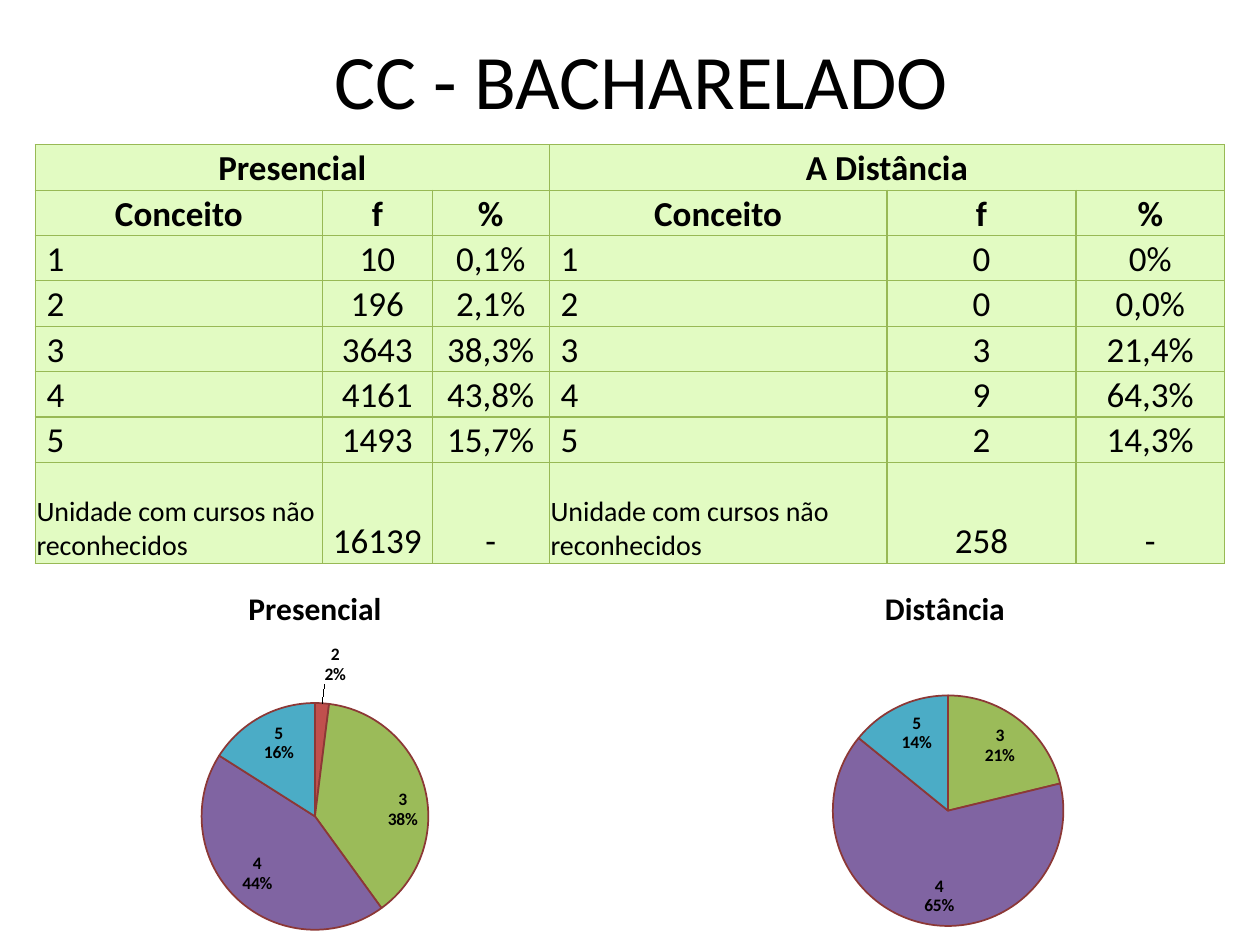
from lxml.etree import SubElement
from pptx import Presentation
from pptx.chart.data import CategoryChartData
from pptx.dml.color import RGBColor
from pptx.enum.chart import XL_CHART_TYPE, XL_LABEL_POSITION
from pptx.enum.text import MSO_ANCHOR, PP_ALIGN
from pptx.oxml import parse_xml
from pptx.oxml.ns import nsdecls, qn
from pptx.util import Inches, Pt

FONT = "Calibri"
BLACK = "000000"
CELL_FILL = "E2FBC2"
BORDER = "98B955"
SLICE_LINE = "8C3836"
SLICES = ["4F81BD", "C0504D", "9BBB59", "8064A2", "4BACC6"]
GRADES = ["1", "2", "3", "4", "5"]
UNRECOGNISED = "Unidade com cursos não reconhecidos"
COLUMNS = [2.28, 0.87, 0.93, 2.68, 1.5, 1.18]
ROWS = [
    ["Presencial", "", "", "A Distância", "", ""],
    ["Conceito", "f", "%"] * 2,
    ["1", "10", "0,1%", "1", "0", "0%"],
    ["2", "196", "2,1%", "2", "0", "0,0%"],
    ["3", "3643", "38,3%", "3", "3", "21,4%"],
    ["4", "4161", "43,8%", "4", "9", "64,3%"],
    ["5", "1493", "15,7%", "5", "2", "14,3%"],
    [UNRECOGNISED, "16139", "-", UNRECOGNISED, "258", "-"],
]


def colour(value):
    return RGBColor.from_string(value)


def style_font(font, size, bold=False):
    font.name = FONT
    font.size = Pt(size)
    font.bold = bold
    font.color.rgb = colour(BLACK)


def write(frame, text, size, bold=False, align=PP_ALIGN.CENTER):
    para = frame.paragraphs[0]
    para.alignment = align
    span = para.add_run()
    span.text = text
    style_font(span.font, size, bold)


def add_title(page, box, text):
    title = page.shapes.title
    title.left, title.top, title.width, title.height = map(Inches, box)
    title.text_frame.vertical_anchor = MSO_ANCHOR.MIDDLE
    write(title.text_frame, text, 44)


def draw_borders(cell):
    properties = cell._tc.get_or_add_tcPr()
    for index, side in enumerate(["lnL", "lnR", "lnT", "lnB"]):
        properties.insert(index, parse_xml(
            f'<a:{side} {nsdecls("a")} w="{Pt(0.75)}"><a:solidFill>'
            f'<a:srgbClr val="{BORDER}"/></a:solidFill></a:{side}>'))


def add_grades_table(page, box):
    frame = page.shapes.add_table(len(ROWS), len(COLUMNS), *map(Inches, box))
    table = frame.table
    for column, width in zip(table.columns, COLUMNS):
        column.width = Inches(width)
    last = len(ROWS) - 1
    for row_index, texts in enumerate(ROWS):
        table.rows[row_index].height = Inches(0.8 if row_index == last else 0.36)
        for column_index, text in enumerate(texts):
            cell = table.cell(row_index, column_index)
            header = row_index < 2
            label = not header and column_index % 3 == 0
            cell.fill.solid()
            cell.fill.fore_color.rgb = colour(CELL_FILL)
            draw_borders(cell)
            cell.vertical_anchor = MSO_ANCHOR.BOTTOM
            cell.margin_left = Inches(0.09 if label and row_index < last else 0.01)
            cell.margin_right = cell.margin_top = Inches(0.01)
            cell.margin_bottom = 0
            if text:
                write(cell.text_frame, text, 16 if text == UNRECOGNISED else 20,
                      header, PP_ALIGN.LEFT if label else PP_ALIGN.CENTER)
    for start in (0, 3):
        table.cell(0, start).merge(table.cell(0, start + 2))


def manual_layout(**values):
    entries = "".join(f'<c:{name} val="{value}"/>' for name, value in values.items())
    return parse_xml(f'<c:layout {nsdecls("c")}><c:manualLayout>{entries}'
                     f'</c:manualLayout></c:layout>')


def place_plot(chart, plot_box):
    area = chart._chartSpace.chart.plotArea
    for layout in area.findall(qn("c:layout")):
        area.remove(layout)
    left, top, width, height = plot_box
    area.insert(0, manual_layout(layoutTarget="inner", xMode="edge", yMode="edge",
                                 x=left, y=top, w=width, h=height))


def add_separator(labels):
    separator = SubElement(labels, qn("c:separator"))
    separator.text = "\n"
    labels.find(qn("c:showBubbleSize")).addnext(separator)


def label_outside(point, shift):
    label = point.data_label
    style_font(label.font, 10, True)
    label.position = XL_LABEL_POSITION.OUTSIDE_END
    element = label._dLbl
    for name, shown in [("showVal", "0"), ("showCatName", "1"), ("showPercent", "1")]:
        element.find(qn(f"c:{name}")).set("val", shown)
    add_separator(element)
    element.find(qn("c:idx")).addnext(manual_layout(x=shift, y=-0.03))


def hide_label(point):
    point.data_label.position = XL_LABEL_POSITION.OUTSIDE_END
    element = point.data_label._dLbl
    for child in list(element)[1:]:
        element.remove(child)
    SubElement(element, qn("c:delete")).set("val", "1")


def add_pie(page, box, title, values, plot_box):
    data = CategoryChartData()
    data.categories = GRADES
    data.add_series(title, values)
    chart = page.shapes.add_chart(XL_CHART_TYPE.PIE, *map(Inches, box), data).chart
    style_font(chart.font, 10)
    chart.has_legend = False
    chart.has_title = True
    write(chart.chart_title.text_frame, title, 18, True)
    place_plot(chart, plot_box)
    plot = chart.plots[0]
    plot.vary_by_categories = True
    series = plot.series[0]
    labels = series.data_labels
    style_font(labels.font, 10, True)
    labels.show_value = False
    labels.show_category_name = labels.show_percentage = True
    labels.position = XL_LABEL_POSITION.INSIDE_END
    add_separator(labels._element)
    for index, fill in enumerate(SLICES):
        slice_format = series.points[index].format
        slice_format.fill.solid()
        slice_format.fill.fore_color.rgb = colour(fill)
        slice_format.line.color.rgb = colour(SLICE_LINE)
        slice_format.line.width = Pt(1)
    for index, shift in enumerate([-0.02, 0.02]):
        if values[1]:
            label_outside(series.points[index], shift)
        else:
            hide_label(series.points[index])


def main():
    deck = Presentation()
    deck.slide_width, deck.slide_height = Inches(10), Inches(7.5)
    page = deck.slides.add_slide(deck.slide_layouts[5])
    add_title(page, (0.59, 0, 9, 1.25), "CC - BACHARELADO")
    add_grades_table(page, (0.28, 1.15, 9.45, 3.31))
    add_pie(page, (5, 4.5, 5, 3), "Distância", [0, 0, 21, 64, 14],
            (0.32, 0.34, 0.37, 0.61))
    add_pie(page, (0, 4.5, 5, 3), "Presencial", [0, 2, 38, 44, 16],
            (0.32, 0.36, 0.36, 0.6))
    deck.save("out.pptx")


if __name__ == "__main__":
    main()
